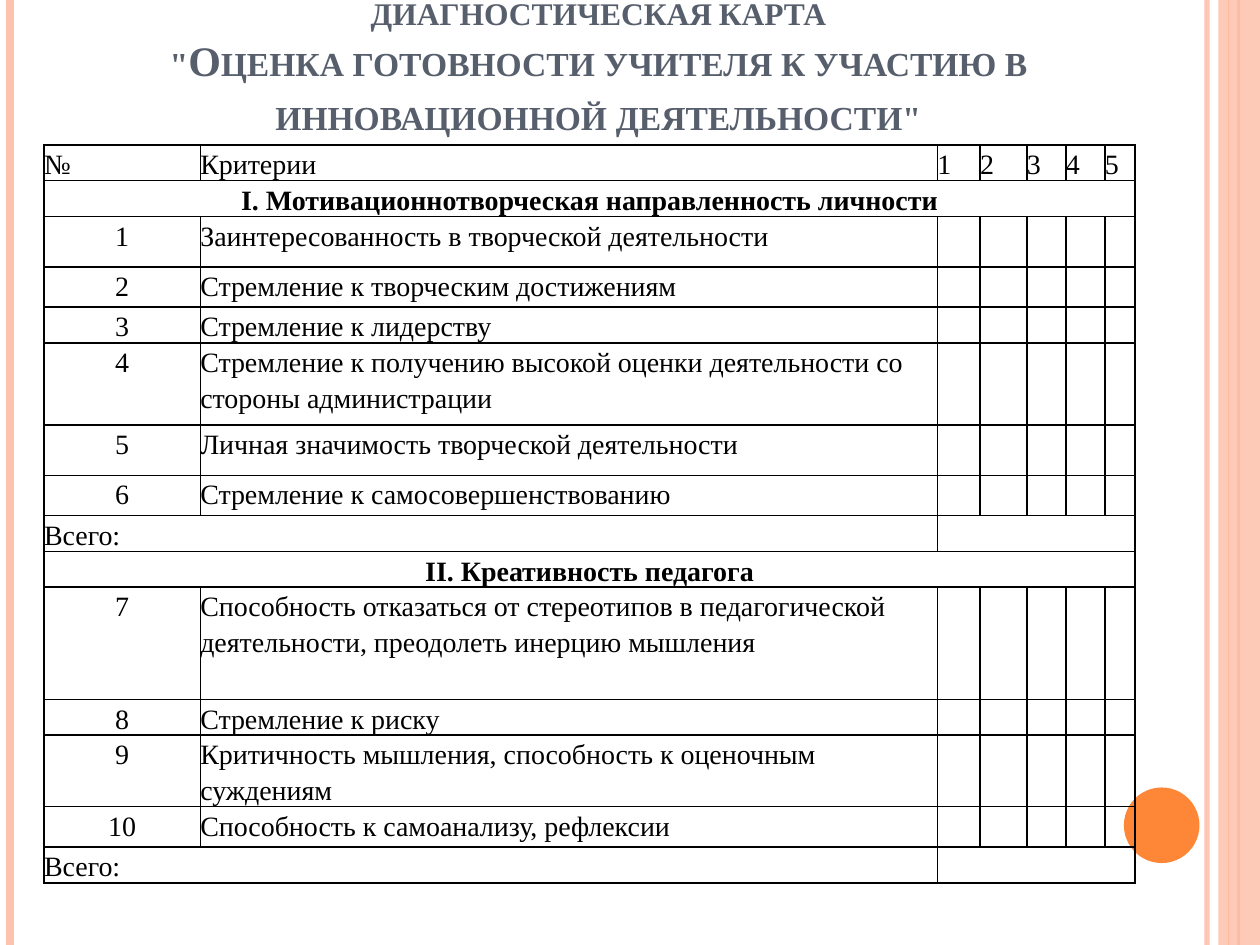
from lxml import etree
from pptx import Presentation
from pptx.dml.color import RGBColor
from pptx.enum import shapes, text
from pptx.oxml.ns import qn
from pptx.util import Inches, Pt

FONT = "Times New Roman"
PEACH, ORANGE, SLATE, BLACK = "FEC3AE", "FE8637", "575F6D", "000000"
TITLE = [
    ("ДИАГНОСТИЧЕСКАЯ КАРТА", 18, 1),
    ('"Оценка готовности учителя к участию в инновационной деятельности"', 24, 1.06),
]
STRIPES = [(9.58, PEACH, 3, 93), (0.08, PEACH, 4.5, 100),
           (9.83, ORANGE, 1.5, 100), (9.75, ORANGE, 0.75, 100)]
BLOCKS = ((shapes.MSO_SHAPE.RECTANGLE, (9.67, 0, 0.33, 7.5), PEACH, 87),
          (shapes.MSO_SHAPE.OVAL, (8.92, 6.25, 0.6, 0.6), ORANGE, 100))
COLS = [1.24, 5.85, 0.34, 0.37, 0.31, 0.31, 0.24]
LOW = 0.28
ROWS = [
    ("head", ["№", "Критерии", "1", "2", "3", "4", "5"], LOW),
    ("part", ["I. Мотивационнотворческая направленность личности"], LOW),
    ("item", ["1", "Заинтересованность в творческой деятельности"], 0.4),
    ("item", ["2", "Стремление к творческим достижениям"], 0.32),
    ("item", ["3", "Стремление к лидерству"], LOW),
    ("item", ["4", "Стремление к получению высокой оценки деятельности со стороны администрации"], 0.65),
    ("item", ["5", "Личная значимость творческой деятельности"], 0.4),
    ("item", ["6", "Стремление к самосовершенствованию"], 0.32),
    ("sum", ["Всего:"], LOW),
    ("part", ["II. Креативность педагога"], LOW),
    ("item", ["7", "Способность отказаться от стереотипов в педагогической деятельности, преодолеть инерцию мышления"], 0.89),
    ("item", ["8", "Стремление к риску"], LOW),
    ("item", ["9", "Критичность мышления, способность к оценочным суждениям"], 0.56),
    ("item", ["10", "Способность к самоанализу, рефлексии"], 0.32),
    ("sum", ["Всего:"], LOW),
]
SPANS = {"part": [(0, 6)], "sum": [(0, 1), (2, 6)]}


def paint(fill, color, alpha=100):
    fill.solid()
    fill.fore_color.rgb = RGBColor.from_string(color)
    if alpha < 100:
        node = next(fill._xPr.iter(qn("a:srgbClr")))
        etree.SubElement(node, qn("a:alpha"), val=str(alpha * 1000))


def style(par, size, color, bold):
    for run in par.runs:
        run.font.name = FONT
        run.font.size = Pt(size)
        run.font.bold = bold
        run.font.color.rgb = RGBColor.from_string(color)


def add_title(slide):
    box = slide.shapes.title
    box.left, box.top, box.width, box.height = map(Inches, (0.83, 0, 7.84, 1.55))
    frame = box.text_frame
    frame.auto_size = text.MSO_AUTO_SIZE.NONE
    frame.word_wrap = True
    frame.vertical_anchor = text.MSO_ANCHOR.BOTTOM
    frame.margin_bottom = Inches(0.45)
    frame.text = "\n".join(line for line, _, _ in TITLE)
    for par, (_, size, gap) in zip(frame.paragraphs, TITLE):
        par.alignment = text.PP_ALIGN.CENTER
        par.line_spacing = gap
        style(par, size, SLATE, True)
        for run in par.runs:
            run.font._element.set("cap", "small")


def add_stripe(slide, left, color, width, alpha):
    line = slide.shapes.add_connector(
        shapes.MSO_CONNECTOR.STRAIGHT, Inches(left), 0, Inches(left), Inches(7.5))
    line.line.width = Pt(width)
    paint(line.line.fill, color, alpha)
    etree.SubElement(line._element.spPr, qn("a:effectLst"))


def add_block(slide, kind, place, color, alpha):
    block = slide.shapes.add_shape(kind, *map(Inches, place))
    block.shadow.inherit = False
    paint(block.fill, color, alpha)
    block.line.fill.background()


def add_edges(cell):
    props = cell._tc.get_or_add_tcPr()
    for spot, side in enumerate(("lnL", "lnR", "lnT", "lnB")):
        edge = etree.Element(qn("a:" + side), w=str(Pt(1)))
        fill = etree.SubElement(edge, qn("a:solidFill"))
        etree.SubElement(fill, qn("a:srgbClr"), val=BLACK)
        props.insert(spot, edge)


def fill_cell(cell, words, kind, col):
    cell.margin_left = cell.margin_right = cell.margin_top = cell.margin_bottom = 0
    cell.fill.background()
    add_edges(cell)
    cell.text_frame.text = words
    par = cell.text_frame.paragraphs[0]
    par.line_spacing = 1.15
    if kind == "part" or (kind == "item" and col == 0):
        par.alignment = text.PP_ALIGN.CENTER
    style(par, 16, BLACK, kind == "part")
    if not words:
        etree.SubElement(par._p, qn("a:endParaRPr"), sz="1600")


def add_grid(slide):
    high = sum(row[2] for row in ROWS)
    grid = slide.shapes.add_table(
        len(ROWS), len(COLS), Inches(0.35), Inches(1.15),
        Inches(sum(COLS)), Inches(high)).table
    grid.first_row = grid.horz_banding = False
    for col, width in zip(grid.columns, COLS):
        col.width = Inches(width)
    for r, (kind, words, height) in enumerate(ROWS):
        grid.rows[r].height = Inches(height)
        for c in range(len(COLS)):
            fill_cell(grid.cell(r, c), words[c] if c < len(words) else "", kind, c)
        for first, last in SPANS.get(kind, []):
            grid.cell(r, first).merge(grid.cell(r, last))


def main():
    deck = Presentation()
    deck.slide_width, deck.slide_height = Inches(10), Inches(7.5)
    slide = deck.slides.add_slide(deck.slide_layouts[5])
    for stripe in STRIPES:
        add_stripe(slide, *stripe)
    for block in BLOCKS:
        add_block(slide, *block)
    add_title(slide)
    add_grid(slide)
    deck.save("out.pptx")


if __name__ == "__main__":
    main()
